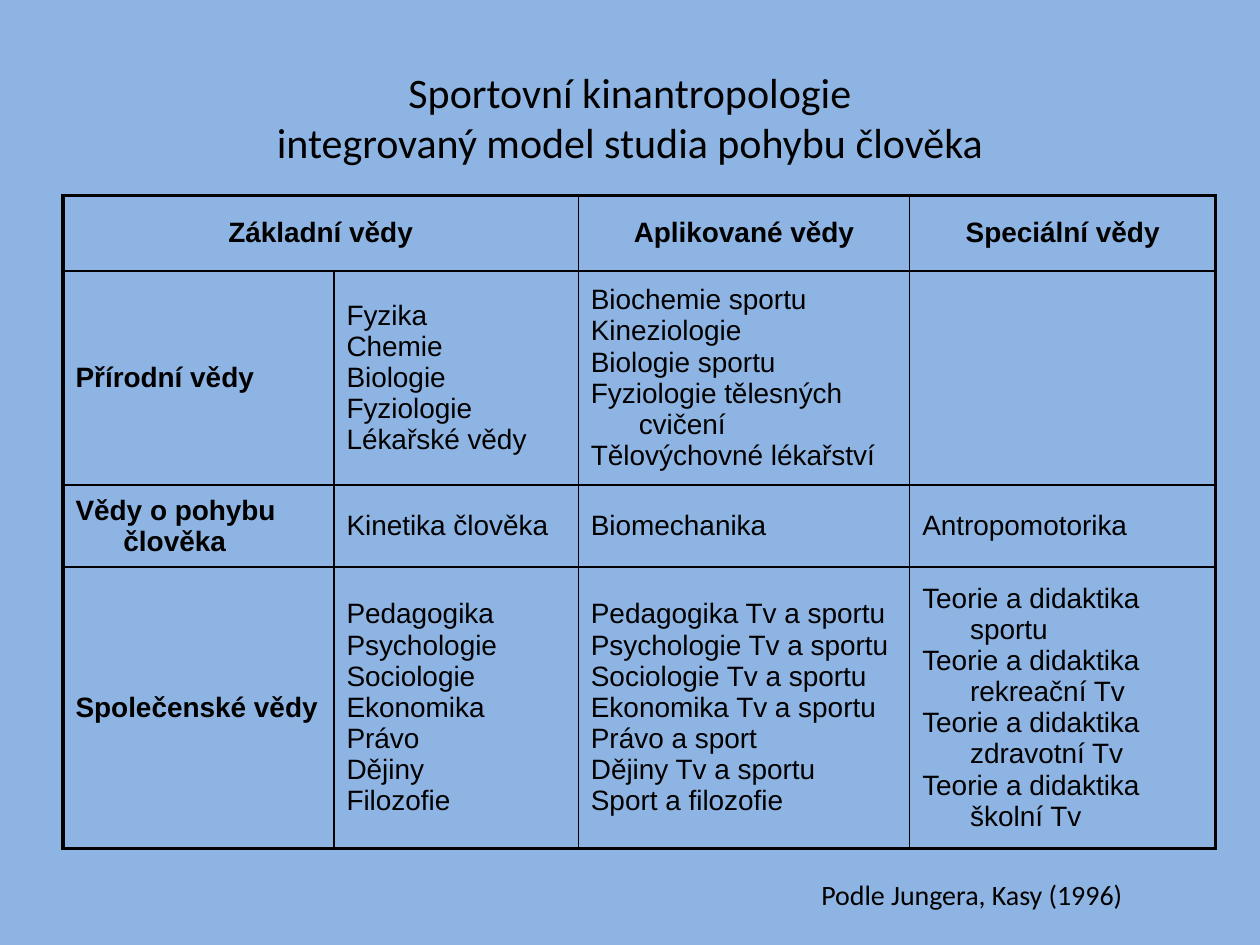
from lxml.etree import SubElement
from pptx import Presentation
from pptx.dml.color import RGBColor
from pptx.enum.text import MSO_ANCHOR, PP_ALIGN
from pptx.oxml.ns import qn
from pptx.util import Inches, Pt

BACKGROUND = RGBColor(0x8E, 0xB4, 0xE3)
BLACK = RGBColor(0x00, 0x00, 0x00)

COLUMN_WIDTHS = [2.15, 1.94, 2.63, 2.43]
ROW_HEIGHTS = [0.6, 1.7, 0.65, 2.23]
SCIENCES = [
    [["Základní vědy"], [], ["Aplikované vědy"], ["Speciální vědy"]],
    [
        ["Přírodní vědy"],
        ["Fyzika", "Chemie", "Biologie", "Fyziologie", "Lékařské vědy"],
        ["Biochemie sportu", "Kineziologie", "Biologie sportu",
         "Fyziologie tělesných cvičení", "Tělovýchovné lékařství"],
        [],
    ],
    [["Vědy o pohybu člověka"], ["Kinetika člověka"], ["Biomechanika"], ["Antropomotorika"]],
    [
        ["Společenské vědy"],
        ["Pedagogika", "Psychologie", "Sociologie", "Ekonomika", "Právo", "Dějiny", "Filozofie"],
        ["Pedagogika Tv a sportu", "Psychologie Tv a sportu", "Sociologie Tv a sportu",
         "Ekonomika Tv a sportu", "Právo a sport", "Dějiny Tv a sportu", "Sport a filozofie"],
        ["Teorie a didaktika sportu", "Teorie a didaktika rekreační Tv",
         "Teorie a didaktika zdravotní Tv", "Teorie a didaktika školní Tv"],
    ],
]


def format_runs(paragraph, font_name, size, bold=False):
    for run in paragraph.runs:
        run.font.name = font_name
        run.font.size = Pt(size)
        run.font.bold = bold
        run.font.color.rgb = BLACK


def add_text(slide, text, left, top, width, height, size, alignment):
    frame = slide.shapes.add_textbox(
        Inches(left), Inches(top), Inches(width), Inches(height)).text_frame
    frame.word_wrap = True
    frame.vertical_anchor = MSO_ANCHOR.MIDDLE
    paragraph = frame.paragraphs[0]
    paragraph.text = text
    paragraph.alignment = alignment
    format_runs(paragraph, "Calibri", size)


def set_borders(cell, outer_sides):
    properties = cell._tc.get_or_add_tcPr()
    for side in "LRTB":
        width = Pt(2 if side in outer_sides else 1)
        line = SubElement(properties, qn(f"a:ln{side}"), w=str(width))
        fill = SubElement(line, qn("a:solidFill"))
        SubElement(fill, qn("a:srgbClr"), val=str(BLACK))


def fill_cell(cell, lines, is_header, is_bold):
    cell.vertical_anchor = MSO_ANCHOR.MIDDLE
    cell.text_frame.text = "\n".join(lines)
    for paragraph in cell.text_frame.paragraphs:
        paragraph.alignment = PP_ALIGN.CENTER if is_header else PP_ALIGN.LEFT
        indent = paragraph._p.get_or_add_pPr()
        indent.set("marL", str(Inches(0.38)))
        indent.set("indent", str(-Inches(0.38)))
        format_runs(paragraph, "Arial", 16, is_bold)


def add_sciences_table(slide):
    last_row, last_column = len(ROW_HEIGHTS) - 1, len(COLUMN_WIDTHS) - 1
    table = slide.shapes.add_table(
        len(ROW_HEIGHTS), len(COLUMN_WIDTHS), Inches(0.5), Inches(1.55),
        Inches(sum(COLUMN_WIDTHS)), Inches(sum(ROW_HEIGHTS))).table
    table.first_row = False
    table.horz_banding = False
    for column, width in zip(table.columns, COLUMN_WIDTHS):
        column.width = Inches(width)
    for row, height in zip(table.rows, ROW_HEIGHTS):
        row.height = Inches(height)
    table.cell(0, 0).merge(table.cell(0, 1))
    for r, row_texts in enumerate(SCIENCES):
        for c, lines in enumerate(row_texts):
            cell = table.cell(r, c)
            edges = {"L": c == 0, "R": c == last_column, "T": r == 0, "B": r == last_row}
            set_borders(cell, [side for side, is_outer in edges.items() if is_outer])
            cell.fill.background()
            fill_cell(cell, lines, is_header=r == 0, is_bold=r == 0 or c == 0)


def main():
    presentation = Presentation()
    presentation.slide_width = Inches(10)
    presentation.slide_height = Inches(7.5)
    slide = presentation.slides.add_slide(presentation.slide_layouts[6])
    slide.background.fill.solid()
    slide.background.fill.fore_color.rgb = BACKGROUND
    add_text(slide, "Sportovní kinantropologie\nintegrovaný model studia pohybu člověka",
             0.5, 0.3, 9, 1.25, 24, PP_ALIGN.CENTER)
    add_sciences_table(slide)
    add_text(slide, "Podle Jungera, Kasy (1996)", 6.42, 6.91, 3.02, 0.37, 16, PP_ALIGN.LEFT)
    presentation.save("out.pptx")


if __name__ == "__main__":
    main()
